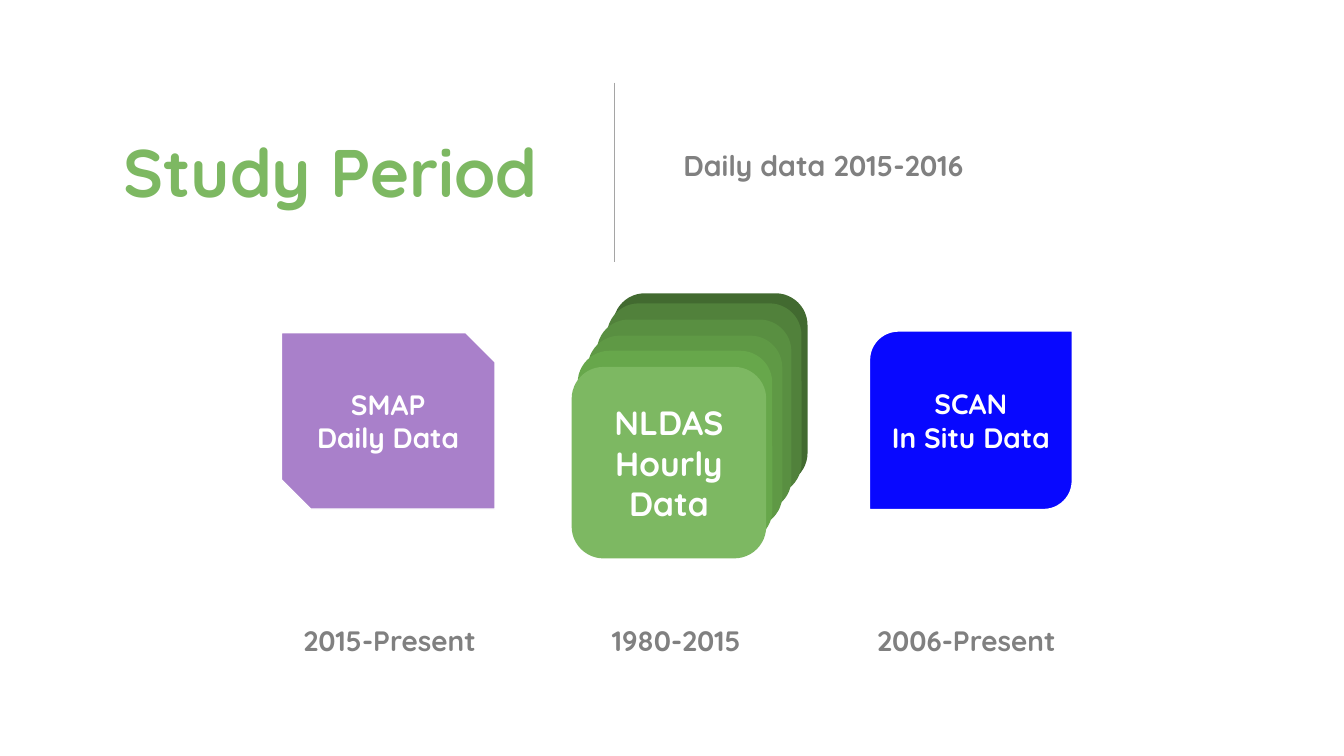
from lxml import etree
from pptx import Presentation
from pptx import util as u
from pptx.dml.color import RGBColor
from pptx.enum import shapes, text
from pptx.oxml.ns import qn

WHITE = RGBColor(0xFF, 0xFF, 0xFF)
GRAY = RGBColor(0x80, 0x80, 0x80)
RULE_GRAY = RGBColor(0xA5, 0xA5, 0xA5)
GREEN = RGBColor(0x7D, 0xB8, 0x62)
BLUE = RGBColor(0x08, 0x08, 0xFF)
PURPLE = RGBColor(0xA9, 0x80, 0xCA)
STACK_GREENS = [
    RGBColor(0x42, 0x6A, 0x30),
    RGBColor(0x51, 0x81, 0x3B),
    RGBColor(0x59, 0x8F, 0x41),
    RGBColor(0x5F, 0x99, 0x45),
    RGBColor(0x67, 0xA7, 0x4B),
    GREEN,
]
STACK_CORNERS = [(6.08, 2.91), (6.02, 3.01), (5.92, 3.17), (5.83, 3.33), (5.73, 3.48), (5.67, 3.64)]
CENTER = text.PP_ALIGN.CENTER
LEFT = text.PP_ALIGN.LEFT
MIDDLE = text.MSO_ANCHOR.MIDDLE
TOP = text.MSO_ANCHOR.TOP


def write(shape, lines, size, color, alignment, spacing=None, anchor=MIDDLE, tabs=()):
    frame = shape.text_frame
    frame.word_wrap = True
    frame.vertical_anchor = anchor
    frame.text = "\n".join(lines)
    for paragraph in frame.paragraphs:
        paragraph.alignment = alignment
        paragraph.line_spacing = spacing
        if tabs:
            tab_list = etree.SubElement(paragraph._p.get_or_add_pPr(), qn("a:tabLst"))
            for position in tabs:
                etree.SubElement(tab_list, qn("a:tab"), pos=str(u.Inches(position)), algn="l")
        paragraph.font.color.rgb = color
        font_format = {"name": "Quicksand", "size": u.Pt(size), "bold": True}
        for name, value in font_format.items():
            setattr(paragraph.font, name, value)


def add_block(kind, box, fill, line_width=None):
    shape = slide.shapes.add_shape(kind, *map(u.Inches, box))
    shape.shadow.inherit = False
    shape.fill.solid()
    shape.fill.fore_color.rgb = fill
    if line_width:
        shape.line.color.rgb = WHITE
        shape.line.width = u.Pt(line_width)
    else:
        shape.line.fill.background()
    return shape


presentation = Presentation()
presentation.slide_width = u.Inches(13.33)
presentation.slide_height = u.Inches(7.5)
slide = presentation.slides.add_slide(presentation.slide_layouts[6])

divider = slide.shapes.add_connector(
    shapes.MSO_CONNECTOR.STRAIGHT, u.Inches(6.09), u.Inches(0.82), u.Inches(6.09), u.Inches(2.6)
)
divider.line.color.rgb = RULE_GRAY
divider.line.width = u.Pt(0.5)
etree.SubElement(divider.element.spPr, qn("a:effectLst"))

subtitle = add_block(shapes.MSO_SHAPE.RECTANGLE, (6.68, 1.33, 3.24, 0.65), WHITE)
write(subtitle, ["Daily data 2015-2016"], 20.4, GRAY, LEFT, 0.9)

title = slide.shapes.add_textbox(*map(u.Inches, (1.08, 0.74, 4.53, 2)))
title.text_frame.margin_right = u.Inches(0.28)
write(title, ["Study Period"], 48, GREEN, text.PP_ALIGN.RIGHT, 0.9)

sources = [
    (shapes.MSO_SHAPE.ROUND_2_DIAG_RECTANGLE, (8.61, 3.27, 2.04, 1.8), BLUE, 3, ["SCAN", "In Situ Data"]),
    (shapes.MSO_SHAPE.SNIP_2_DIAG_RECTANGLE, (2.79, 3.3, 2.12, 1.75), PURPLE, 1, ["SMAP", "Daily Data"]),
]
for kind, box, fill, line_width, lines in sources:
    source = add_block(kind, box, fill, line_width)
    write(source, lines, 20, WHITE, CENTER)

periods = slide.shapes.add_textbox(*map(u.Inches, (2.91, 6.14, 8.15, 0.44)))
periods.text_frame.auto_size = text.MSO_AUTO_SIZE.SHAPE_TO_FIT_TEXT
years = "2015-Present\t1980-2015\t2006-Present"
write(periods, [years], 20, GRAY, LEFT, anchor=TOP, tabs=(3.06, 5.69))

for corner, fill in zip(STACK_CORNERS, STACK_GREENS):
    card = add_block(shapes.MSO_SHAPE.ROUNDED_RECTANGLE, (*corner, 1.93, 1.9), fill)
write(card, ["NLDAS", "Hourly", "Data"], 24, WHITE, CENTER)

presentation.save("out.pptx")
